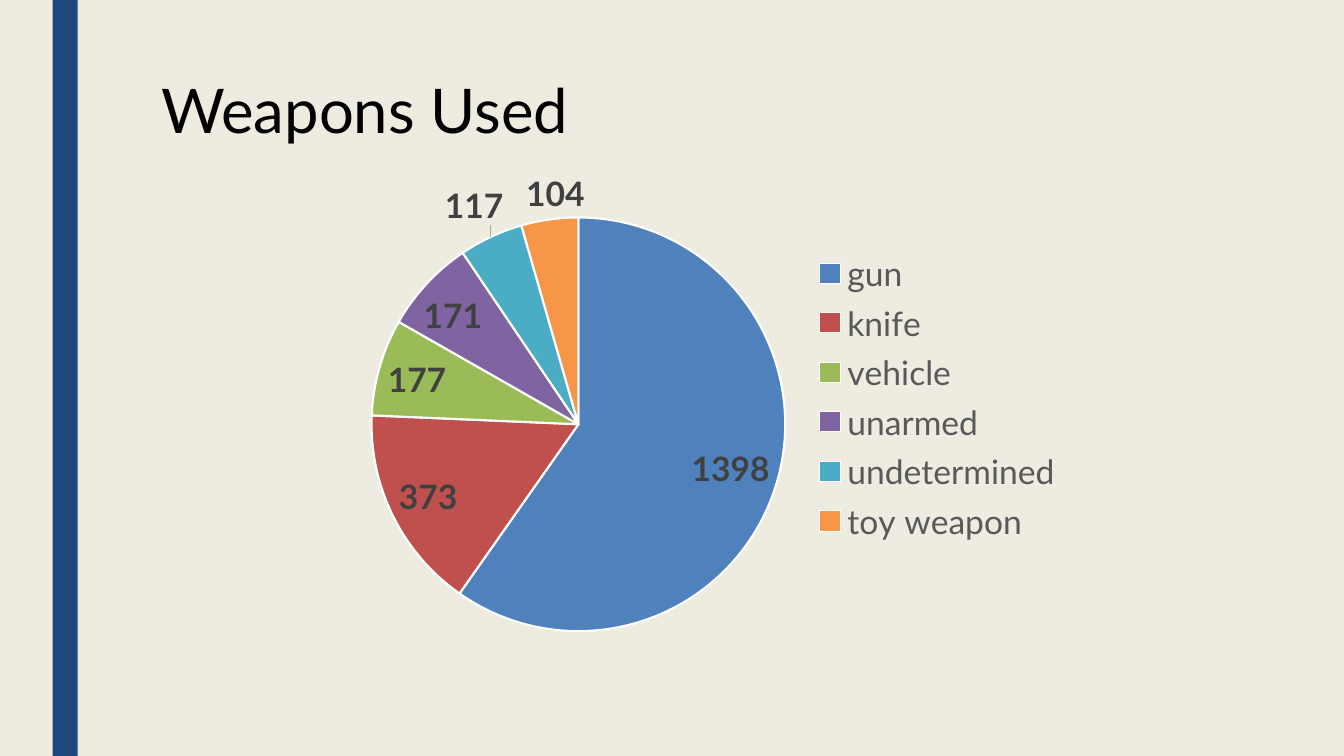
from lxml import etree
from pptx import Presentation
from pptx.chart.data import CategoryChartData
from pptx.dml.color import RGBColor
from pptx.enum.chart import XL_CHART_TYPE, XL_LABEL_POSITION, XL_LEGEND_POSITION
from pptx.enum.shapes import MSO_SHAPE
from pptx.enum.text import MSO_ANCHOR
from pptx.oxml.ns import qn
from pptx.util import Pt

RECTANGLE = MSO_SHAPE.RECTANGLE
PIE = XL_CHART_TYPE.PIE
BEST_FIT = XL_LABEL_POSITION.BEST_FIT
OUTSIDE_END = XL_LABEL_POSITION.OUTSIDE_END
LEGEND_RIGHT = XL_LEGEND_POSITION.RIGHT
TOP = MSO_ANCHOR.TOP

WEAPONS = [
    ("gun", 1398, "4F81BD"),
    ("knife", 373, "C0504D"),
    ("vehicle", 177, "9BBB59"),
    ("unarmed", 171, "8064A2"),
    ("undetermined", 117, "4BACC6"),
    ("toy weapon", 104, "F79646"),
]
PLOT_LAYOUT = {"layoutTarget": "inner", "xMode": "edge", "yMode": "edge",
               "x": 0.103, "y": 0.123, "w": 0.532, "h": 0.848}
LEGEND_LAYOUT = {"xMode": "edge", "yMode": "edge",
                 "x": 0.67, "y": 0.178, "w": 0.32, "h": 0.627}
OUTSIDE_LABEL_SHIFTS = {
    "undetermined": {"x": 0.019, "y": -0.012},
    "toy weapon": {"x": 0.046, "y": 0},
}


def color(value):
    return RGBColor.from_string(value)


def set_layout(parent, position, values):
    """Give a chart element a manual layout as its child at the given position."""
    for layout in parent.findall(qn("c:layout")):
        parent.remove(layout)
    layout = etree.Element(qn("c:layout"))
    manual = etree.SubElement(layout, qn("c:manualLayout"))
    for name, value in values.items():
        etree.SubElement(manual, qn(f"c:{name}")).set("val", str(value))
    parent.insert(position, layout)


def add_leader_lines(labels_element, line_color):
    element = etree.SubElement(labels_element, qn("c:leaderLines"))
    for tag in ("c:spPr", "a:ln", "a:solidFill", "a:srgbClr"):
        element = etree.SubElement(element, qn(tag))
    element.set("val", line_color)


class SlideBuilder:
    font_name = "Lato"
    label_format = {"size": 24, "color": "404040", "bold": True}
    legend_format = {"size": 24, "color": "595959", "bold": False}
    title_format = {"size": 44, "color": "000000", "bold": False}

    def __init__(self, page, background):
        self.page = page
        fill = page.background.fill
        fill.solid()
        fill.fore_color.rgb = color(background)

    def style_font(self, font, values):
        settings = {"name": self.font_name, "size": Pt(values["size"]), "bold": values["bold"]}
        for name, value in settings.items():
            setattr(font, name, value)
        font.color.rgb = color(values["color"])

    def bar(self, left, top, width, height, fill):
        shape = self.page.shapes.add_shape(RECTANGLE, Pt(left), Pt(top), Pt(width), Pt(height))
        shape.shadow.inherit = False
        shape.fill.solid()
        shape.fill.fore_color.rgb = color(fill)
        shape.line.fill.background()

    def title(self, left, top, width, height, text):
        box = self.page.shapes.add_textbox(Pt(left), Pt(top), Pt(width), Pt(height))
        frame = box.text_frame
        frame.word_wrap = True
        frame.vertical_anchor = TOP
        para = frame.paragraphs[0]
        para.line_spacing = 0.89
        span = para.add_run()
        span.text = text
        self.style_font(span.font, self.title_format)

    def pie(self, left, top, width, height, rows):
        data = CategoryChartData()
        data.categories = [name for name, _, _ in rows]
        data.add_series("Series 1", [value for _, value, _ in rows])
        chart = self.page.shapes.add_chart(
            PIE, Pt(left), Pt(top), Pt(width), Pt(height), data).chart
        chart.has_title = False
        chart.font.name = self.font_name
        chart.font.size = Pt(10)
        chart.has_legend = True
        chart.legend.position = LEGEND_RIGHT
        chart.legend.include_in_layout = False
        self.style_font(chart.legend.font, self.legend_format)

        plot = chart.plots[0]
        plot.vary_by_categories = True
        series = plot.series[0]
        labels = series.data_labels
        labels.show_value = True
        labels.position = BEST_FIT
        self.style_font(labels.font, self.label_format)
        for index, (_, _, fill) in enumerate(rows):
            point = series.points[index]
            point.format.fill.solid()
            point.format.fill.fore_color.rgb = color(fill)
            point.format.line.color.rgb = color("FFFFFF")
            point.format.line.width = Pt(1.5)
            if rows[index][0] in OUTSIDE_LABEL_SHIFTS:
                self.style_font(point.data_label.font, self.label_format)
                point.data_label.position = OUTSIDE_END

        area = chart.element.find(".//" + qn("c:plotArea"))
        set_layout(area, 0, PLOT_LAYOUT)
        set_layout(chart.element.find(".//" + qn("c:legend")), 1, LEGEND_LAYOUT)
        outside_labels = area.findall(".//" + qn("c:dLbl"))
        for label, shift in zip(outside_labels, OUTSIDE_LABEL_SHIFTS.values()):
            set_layout(label, 1, shift)
        add_leader_lines(area.find(".//" + qn("c:dLbls")), "A6A6A6")


def main():
    deck = Presentation()
    deck.slide_width = Pt(960)
    deck.slide_height = Pt(540)
    builder = SlideBuilder(deck.slides.add_slide(deck.slide_layouts[6]), "EEECE1")
    builder.bar(37.5, 0, 18, 540, "1F497D")
    builder.title(108, 54, 756, 116.5, "Weapons Used")
    builder.pie(208, 112.5, 556, 348.5, WEAPONS)
    deck.save("out.pptx")


if __name__ == "__main__":
    main()
